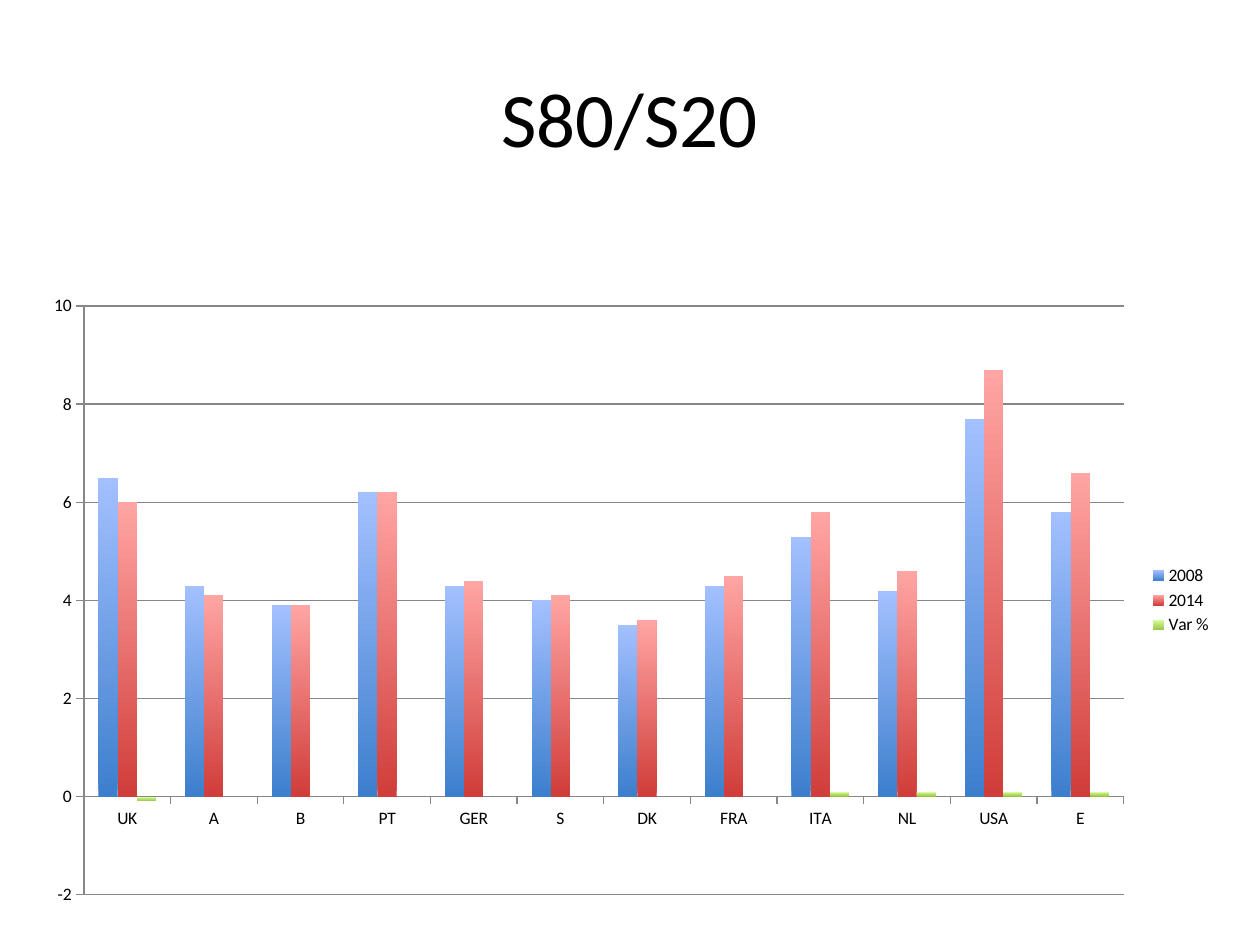
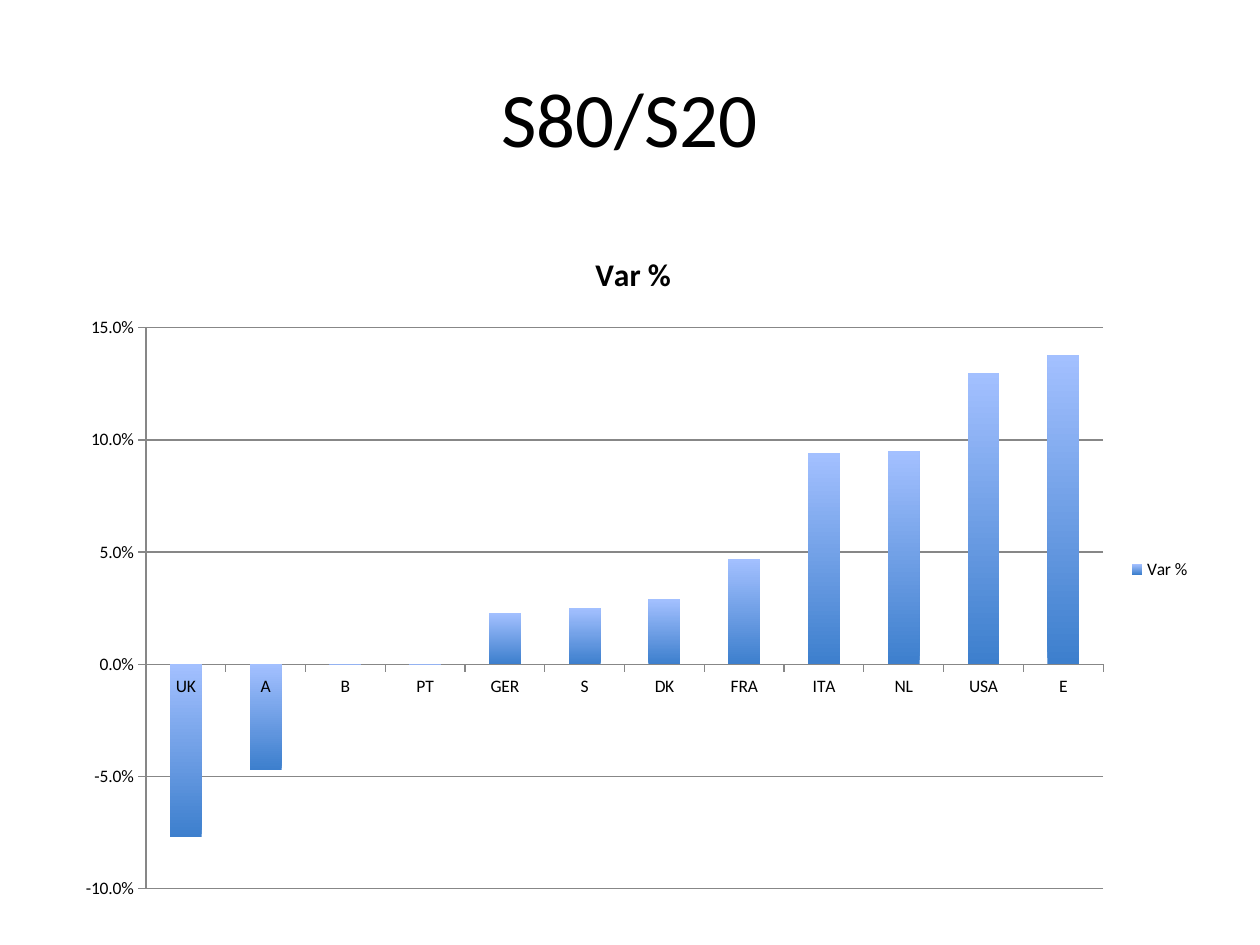
"""Builds two slides that compare S80/S20 income ratios by country."""
from pptx import Presentation, util as u
from pptx.chart import data as chart_data
from pptx.dml import color
from pptx.enum import chart as charts, text

FONT = "Calibri"
COLORS = {"text": "000000", "line": "878787", "background": "FFFFFF"}
GRADIENTS = [("3D7FCD", "A3C0FF"), ("D03D3A", "FFA5A3"), ("9BC348", "D6FF9C")]
COUNTRIES = ["UK", "A", "B", "PT", "GER", "S", "DK", "FRA", "ITA", "NL", "USA", "E"]
RATIOS_2008 = [6.5, 4.3, 3.9, 6.2, 4.3, 4, 3.5, 4.3, 5.3, 4.2, 7.7, 5.8]
RATIOS_2014 = [6, 4.1, 3.9, 6.2, 4.4, 4.1, 3.6, 4.5, 5.8, 4.6, 8.7, 6.6]
ROUNDED_CHANGES = [-0.1, 0, 0, 0, 0, 0, 0, 0, 0.1, 0.1, 0.1, 0.1]
CHANGES = [-0.077, -0.047, 0, 0, 0.023, 0.025, 0.029, 0.047, 0.094, 0.095, 0.13, 0.138]

SLIDES = [
    {"box": (0.24, 2.25, 9.48, 5.03), "scale": (-2, 10, 2), "format": "General", "title": None,
     "series": {"2008": RATIOS_2008, "2014": RATIOS_2014, "Var %": ROUNDED_CHANGES}},
    {"box": (0.5, 1.8, 9.05, 5.44), "scale": (-0.1, 0.15, 0.05), "format": "0.0%", "title": "Var %",
     "series": {"Var %": CHANGES}},
]


def rgb(name):
    return color.RGBColor.from_string(COLORS.get(name, name))


def style_font(font, size, bold=False):
    font.name = FONT
    font.size = u.Pt(size)
    font.bold = bold
    font.color.rgb = rgb("text")


presentation = Presentation()
presentation.slide_width = u.Inches(10)
presentation.slide_height = u.Inches(7.5)

for content in SLIDES:
    slide = presentation.slides.add_slide(presentation.slide_layouts[6])
    slide.background.fill.solid()
    slide.background.fill.fore_color.rgb = rgb("background")

    title = slide.shapes.add_textbox(u.Inches(0.5), u.Inches(0.3), u.Inches(9), u.Inches(1.25))
    title.text_frame.word_wrap = True
    title.text_frame.vertical_anchor = text.MSO_ANCHOR.MIDDLE
    title.text_frame.text = "S80/S20"
    paragraph = title.text_frame.paragraphs[0]
    paragraph.alignment = text.PP_ALIGN.CENTER
    style_font(paragraph.runs[0].font, 44)

    data = chart_data.CategoryChartData(number_format=content["format"])
    data.categories = COUNTRIES
    for name, values in content["series"].items():
        data.add_series(name, values)
    chart = slide.shapes.add_chart(
        charts.XL_CHART_TYPE.COLUMN_CLUSTERED, *map(u.Inches, content["box"]), data).chart
    style_font(chart.font, 10)

    chart.has_title = content["title"] is not None
    if chart.has_title:
        chart.chart_title.text_frame.text = content["title"]
        style_font(chart.chart_title.text_frame.paragraphs[0].runs[0].font, 18, bold=True)
        chart.chart_title.include_in_layout = False
    chart.has_legend = True
    chart.legend.position = charts.XL_LEGEND_POSITION.RIGHT
    chart.legend.include_in_layout = False

    value_axis = chart.value_axis
    value_axis.minimum_scale, value_axis.maximum_scale, value_axis.major_unit = content["scale"]
    value_axis.has_major_gridlines = True
    value_axis.tick_labels.number_format = content["format"]
    value_axis.tick_labels.number_format_is_linked = False
    for axis in (chart.category_axis, value_axis):
        axis.major_tick_mark = charts.XL_TICK_MARK.OUTSIDE
        axis.minor_tick_mark = charts.XL_TICK_MARK.NONE
    for part in (chart.category_axis, value_axis, value_axis.major_gridlines):
        part.format.line.color.rgb = rgb("line")
        part.format.line.width = u.Pt(0.75)

    plot = chart.plots[0]
    plot.gap_width = 150
    plot.overlap = 0
    plot.vary_by_categories = False
    for series, gradient in zip(plot.series, GRADIENTS):
        series.invert_if_negative = False
        fill = series.format.fill
        fill.gradient()
        fill.gradient_angle = 90
        for stop, shade in zip(fill.gradient_stops, gradient):
            stop.color.rgb = rgb(shade)

presentation.save("out.pptx")
